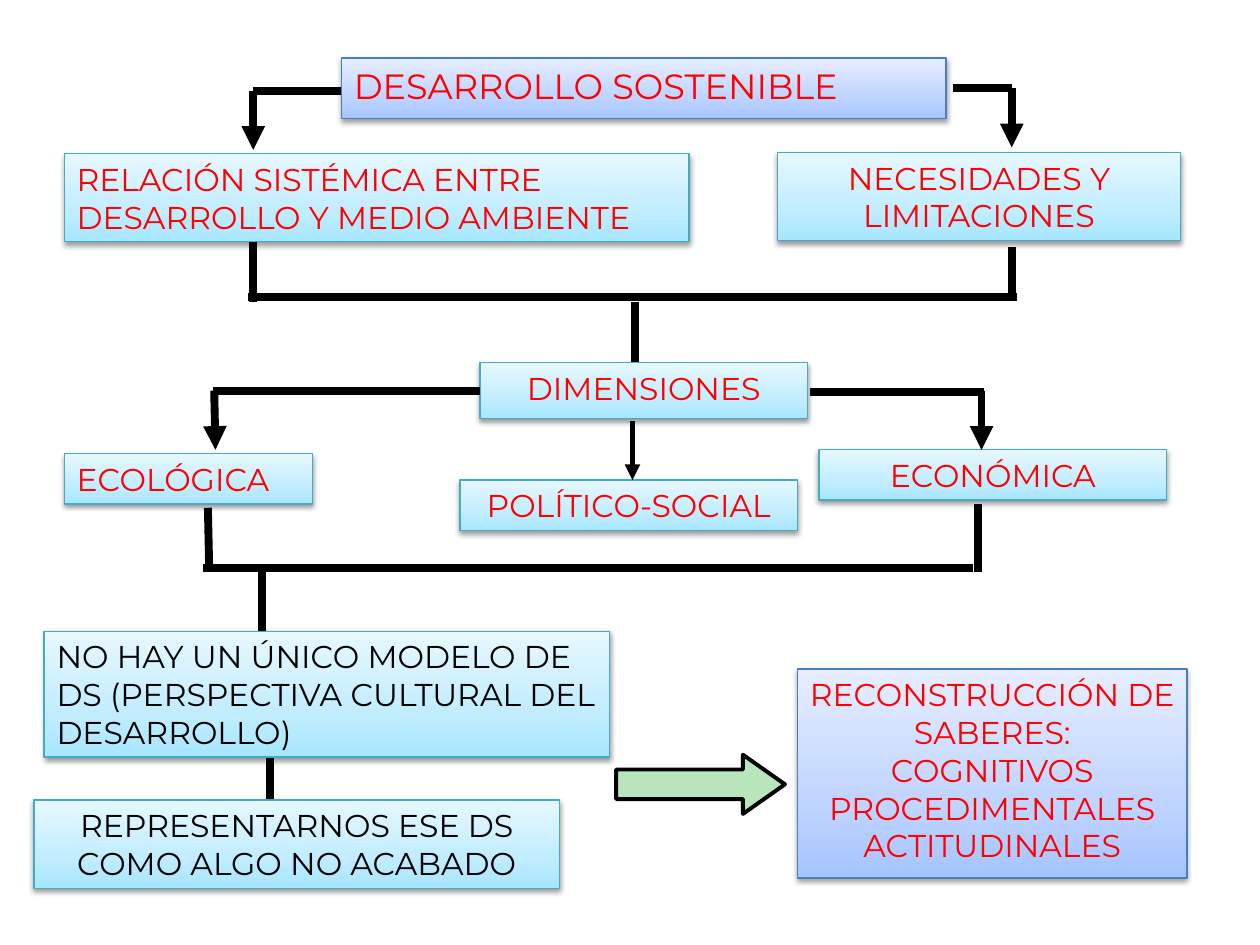
from copy import deepcopy

from lxml.etree import SubElement
from pptx import Presentation
from pptx.dml.color import RGBColor
from pptx.enum.shapes import MSO_CONNECTOR, MSO_SHAPE
from pptx.enum.text import MSO_ANCHOR, MSO_AUTO_SIZE, PP_ALIGN
from pptx.oxml.ns import qn
from pptx.util import Inches, Pt

COLORS = {
    "red": "FF0000",
    "black": "000000",
    "green": "B9E5BD",
    "blue_line": "4B7EBC",
    "cyan_line": "46AAC5",
}
GRADIENTS = {
    "blue": ("A4C4FF", "BFD4FF", "E6EEFF"),
    "cyan": ("A7E6FF", "C1EDFF", "E7F8FF"),
}
STOPS = (0, 0.35, 1)
FONT = "Montserrat"
LEFT, CENTER = PP_ALIGN.LEFT, PP_ALIGN.CENTER

# text, (left, top, width, height), alignment, text colour, theme, size
BOXES = [
    ("DESARROLLO SOSTENIBLE", (2.71, 0.46, 4.8, 0.48), LEFT, "red", "blue", 20),
    ("RELACIÓN SISTÉMICA ENTRE DESARROLLO Y MEDIO AMBIENTE",
     (0.51, 1.22, 4.96, 0.7), LEFT, "red", "cyan", 18),
    ("NECESIDADES Y LIMITACIONES", (6.17, 1.21, 3.2, 0.7), CENTER, "red", "cyan", 18),
    ("DIMENSIONES", (3.81, 2.88, 2.6, 0.44), CENTER, "red", "cyan", 18),
    ("ECOLÓGICA", (0.51, 3.6, 1.97, 0.4), LEFT, "red", "cyan", 18),
    ("POLÍTICO-SOCIAL", (3.65, 3.81, 2.68, 0.4), CENTER, "red", "cyan", 18),
    ("ECONÓMICA", (6.5, 3.57, 2.76, 0.4), CENTER, "red", "cyan", 18),
    ("NO HAY UN ÚNICO MODELO DE DS (PERSPECTIVA CULTURAL DEL DESARROLLO)",
     (0.35, 5.01, 4.49, 1), LEFT, "black", "cyan", 18),
    ("REPRESENTARNOS ESE DS COMO ALGO NO ACABADO",
     (0.27, 6.35, 4.17, 0.7), CENTER, "black", "cyan", 18),
    ("RECONSTRUCCIÓN DE SABERES:\nCOGNITIVOS\nPROCEDIMENTALES\nACTITUDINALES",
     (6.33, 5.31, 3.09, 1.66), CENTER, "red", "blue", 18),
]

# x1, y1, x2, y2
LINES = [
    (2.71, 0.72, 2.01, 0.72),
    (7.56, 0.7, 8.03, 0.7),
    (2.01, 1.92, 2.01, 2.4),
    (1.97, 2.36, 8.07, 2.36),
    (8.03, 1.96, 8.03, 2.36),
    (5.04, 2.4, 5.04, 2.87),
    (3.81, 3.1, 1.69, 3.1),
    (6.43, 3.11, 7.81, 3.11),
    (1.65, 4.03, 1.66, 4.5),
    (1.61, 4.51, 7.72, 4.51),
    (7.76, 4, 7.76, 4.54),
    (2.08, 4.53, 2.08, 5.01),
    (2.14, 6.02, 2.14, 6.34),
]

# x1, y1, x2, y2, width in points
ARROWS = [
    (2.01, 0.72, 2.01, 1.19, 4.5),
    (8.03, 0.7, 8.03, 1.17, 4.5),
    (1.7, 3.1, 1.71, 3.57, 4.5),
    (5.02, 3.34, 5.02, 3.81, 3),
    (7.79, 3.1, 7.79, 3.57, 4.5),
]


def rgb(name):
    return RGBColor.from_string(COLORS[name])


def add_preset(slide, kind, box, line_color, line_width):
    sp = slide.shapes.add_shape(kind, *map(Inches, box))
    sp.shadow.inherit = False
    sp.line.color.rgb = rgb(line_color)
    sp.line.width = Pt(line_width)
    return sp


def fill_gradient(sp, hexes):
    """Fill with three stops, running from the bottom up."""
    sp.fill.gradient()
    stop_list = sp._element.spPr.find(".//" + qn("a:gsLst"))
    stop_list.append(deepcopy(stop_list[0]))
    for stop, position, value in zip(sp.fill.gradient_stops, STOPS, hexes):
        stop.position = position
        stop.color.rgb = RGBColor.from_string(value)
    sp.fill.gradient_angle = 90


def add_shadow(sp):
    effects = sp._element.spPr.find(qn("a:effectLst"))
    shadow = SubElement(effects, qn("a:outerShdw"), blurRad=str(Pt(3.1)),
                        dist=str(Pt(1.6)), dir="5400000", rotWithShape="0")
    color = SubElement(shadow, qn("a:srgbClr"), val=COLORS["black"])
    SubElement(color, qn("a:alpha"), val="38000")


def add_box(slide, text, box, align, color, theme, size):
    sp = add_preset(slide, MSO_SHAPE.RECTANGLE, box, theme + "_line", 0.75)
    fill_gradient(sp, GRADIENTS[theme])
    add_shadow(sp)
    tf = sp.text_frame
    tf.text = text
    tf.word_wrap = True
    tf.auto_size = MSO_AUTO_SIZE.SHAPE_TO_FIT_TEXT
    tf.vertical_anchor = MSO_ANCHOR.TOP
    for p in tf.paragraphs:
        p.alignment = align
        for r in p.runs:
            r.font.name = FONT
            r.font.size = Pt(size)
            r.font.color.rgb = rgb(color)


def add_line(slide, x1, y1, x2, y2, width=4.5):
    line = slide.shapes.add_connector(MSO_CONNECTOR.STRAIGHT,
                                      *map(Inches, (x1, y1, x2, y2)))
    line.line.color.rgb = rgb("black")
    line.line.width = Pt(width)
    SubElement(line._element.spPr, qn("a:effectLst"))
    return line


def add_arrow(slide, *ends_and_width):
    arrow = add_line(slide, *ends_and_width)
    SubElement(arrow.line._get_or_add_ln(), qn("a:tailEnd"), type="triangle")


def add_block_arrow(slide):
    sp = add_preset(slide, MSO_SHAPE.RIGHT_ARROW, (4.89, 5.99, 1.34, 0.47),
                    "black", 2.25)
    sp.adjustments[1] = 0.71
    sp.fill.solid()
    sp.fill.fore_color.rgb = rgb("green")


def main():
    prs = Presentation()
    prs.slide_width, prs.slide_height = Inches(10), Inches(7.5)
    slide = prs.slides.add_slide(prs.slide_layouts[6])
    for box in BOXES:
        add_box(slide, *box)
    for line in LINES:
        add_line(slide, *line)
    for arrow in ARROWS:
        add_arrow(slide, *arrow)
    add_block_arrow(slide)
    prs.save("out.pptx")


if __name__ == "__main__":
    main()
